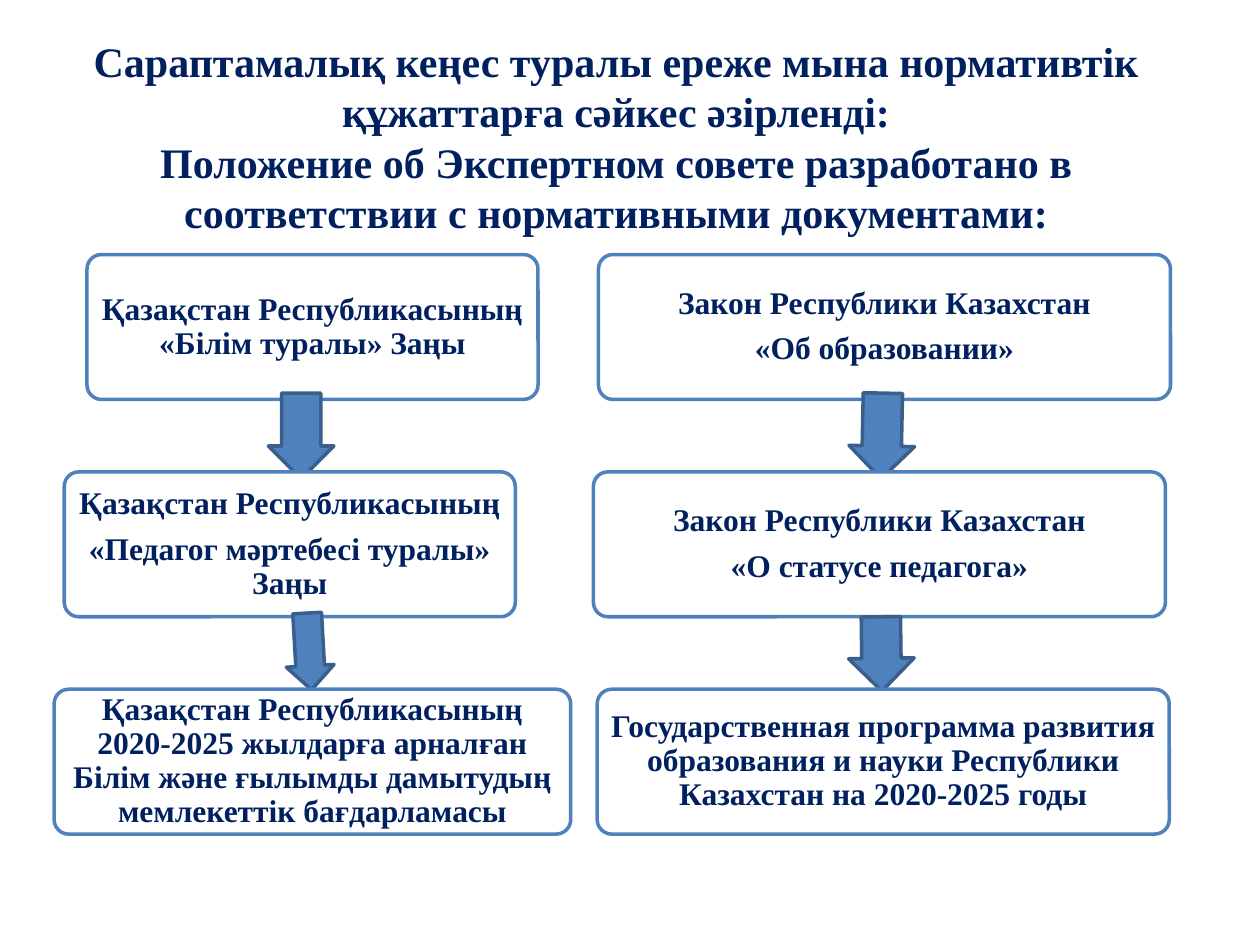
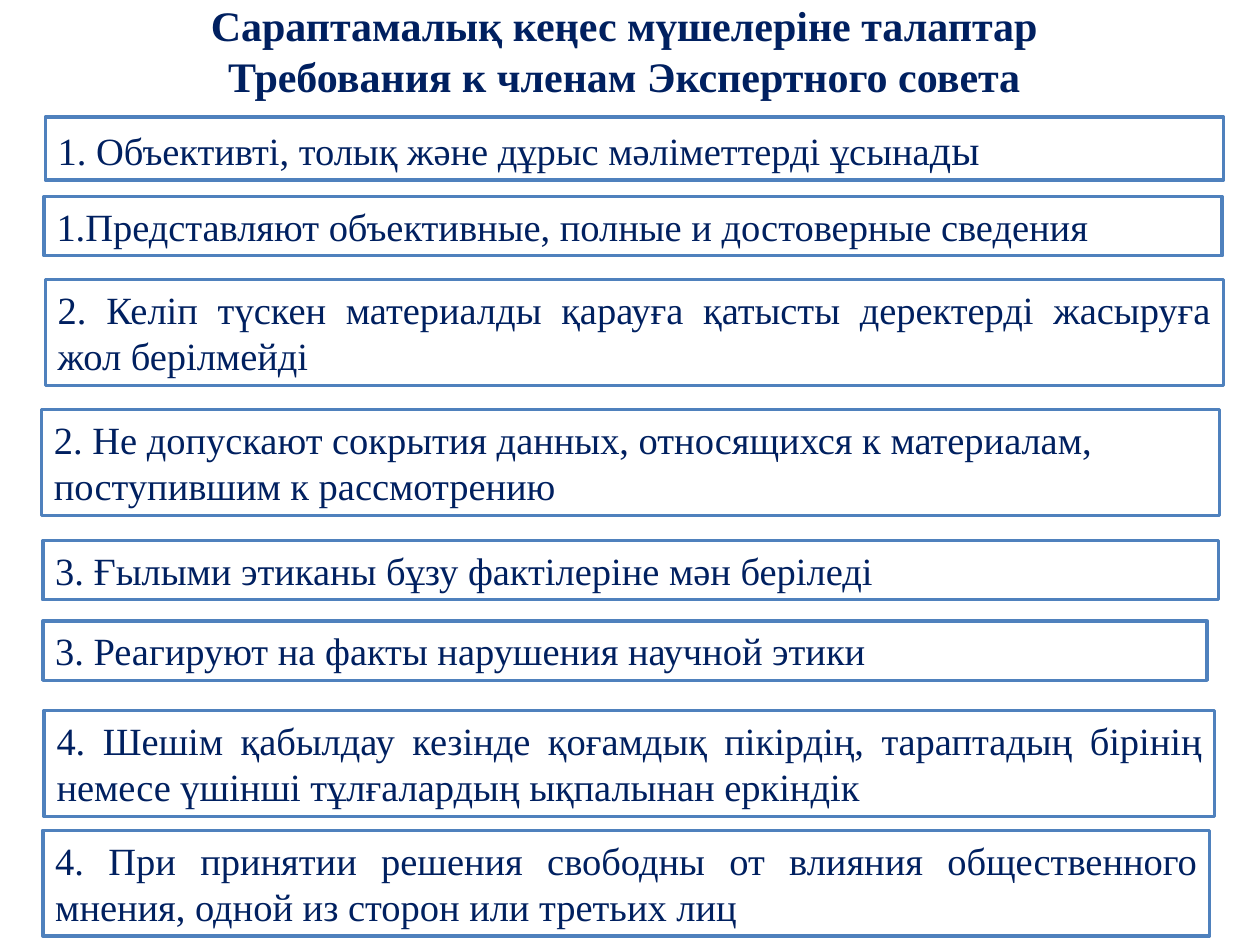
from dataclasses import dataclass

from pptx import Presentation
from pptx.dml.color import RGBColor
from pptx.enum.shapes import MSO_SHAPE
from pptx.enum.text import MSO_ANCHOR, PP_ALIGN
from pptx.util import Inches, Pt

ROUNDED, RECTANGLE, ARROW = MSO_SHAPE.ROUNDED_RECTANGLE, MSO_SHAPE.RECTANGLE, MSO_SHAPE.RIGHT_ARROW
TOP, MIDDLE = MSO_ANCHOR.TOP, MSO_ANCHOR.MIDDLE
LEFT, CENTER, JUSTIFY = PP_ALIGN.LEFT, PP_ALIGN.CENTER, PP_ALIGN.JUSTIFY

COLORS = {"text": "002060", "box": "FFFFFF", "edge": "4F81BD",
          "arrow": "4F81BD", "arrow_edge": "3A5F8C"}
FONT = "Times New Roman"
SLIDE_WIDTH, SLIDE_HEIGHT = Inches(10), Inches(7.5)
COLUMN, ROW = SLIDE_WIDTH / 100, SLIDE_HEIGHT / 75
STEP_TOP, STEP_PITCH, STEP_HEIGHT = 20.2, 17.25, 11.5
TALL, SHORT = 8.4, 4.7


@dataclass(frozen=True)
class Area:
    left: float
    top: float
    width: float
    height: float

    def emu(self) -> tuple[int, ...]:
        return (round(self.left * COLUMN), round(self.top * ROW),
                round(self.width * COLUMN), round(self.height * ROW))


@dataclass(frozen=True)
class Step:
    left: float
    width: float
    lines: tuple[str, ...]


@dataclass(frozen=True)
class Arrow:
    area: Area
    rotation: float


@dataclass(frozen=True)
class Lane:
    steps: tuple[Step, ...]
    arrows: tuple[Arrow, ...]


@dataclass(frozen=True)
class Requirement:
    area: Area
    text: str
    align: PP_ALIGN = LEFT
    large_ending: str = ""


LANES = (
    Lane(
        (Step(6.9, 35.8, ("Қазақстан Республикасының «Білім туралы» Заңы",)),
         Step(5.1, 35.8, ("Қазақстан Республикасының", "«Педагог мәртебесі туралы» Заңы")),
         Step(4.3, 41, ("Қазақстан Республикасының 2020-2025 жылдарға арналған "
                        "Білім және ғылымды дамытудың мемлекеттік бағдарламасы",))),
        (Arrow(Area(20.5, 32, 6.8, 5.2), 90), Arrow(Area(21.5, 49.8, 6.1, 3.8), 86.7)),
    ),
    Lane(
        (Step(47.5, 45.4, ("Закон Республики Казахстан", "«Об образовании»")),
         Step(47.1, 45.4, ("Закон Республики Казахстан", "«О статусе педагога»")),
         Step(47.4, 45.4, ("Государственная программа развития образования и науки "
                           "Республики Казахстан на 2020-2025 годы",))),
        (Arrow(Area(66.6, 32, 6.8, 5.2), 91.2), Arrow(Area(67, 49.3, 5.9, 5.2), 89.2)),
    ),
)

REQUIREMENTS = (
    Requirement(Area(3.6, 9.3, 93.5, 5),
                "1. Объективті, толық және дұрыс мәліметтерді ұсына", large_ending="ды"),
    Requirement(Area(3.5, 15.6, 93.5, SHORT),
                "1.Представляют объективные, полные и достоверные сведения"),
    Requirement(Area(3.6, 22.2, 93.5, TALL),
                "2. Келіп түскен материалды қарауға қатысты деректерді жасыруға жол берілмейді",
                JUSTIFY),
    Requirement(Area(3.3, 32.5, 93.5, TALL),
                "2. Не допускают сокрытия данных, относящихся к материалам, "
                "поступившим к рассмотрению"),
    Requirement(Area(3.4, 42.9, 93.3, SHORT),
                "3. Ғылыми этиканы бұзу фактілеріне мән беріледі", JUSTIFY),
    Requirement(Area(3.4, 49.3, 92.4, SHORT),
                "3. Реагируют на факты нарушения научной этики"),
    Requirement(Area(3.5, 56.4, 92.9, TALL),
                "4. Шешім қабылдау кезінде қоғамдық пікірдің, тараптадың бірінің "
                "немесе үшінші тұлғалардың ықпалынан еркіндік", JUSTIFY),
    Requirement(Area(3.4, 65.9, 92.6, TALL),
                "4. При принятии решения свободны от влияния общественного мнения, "
                "одной из сторон или третьих лиц", JUSTIFY),
)


def add_span(para, text: str, *, size: float, bold: bool = False) -> None:
    span = para.add_run()
    span.text = text
    span.font.name = FONT
    span.font.size = Pt(size)
    span.font.bold = bold
    span.font.color.rgb = RGBColor.from_string(COLORS["text"])


def write(box, lines: tuple[str, ...], *, size: float, bold: bool = False,
          align: PP_ALIGN = CENTER, anchor: MSO_ANCHOR = MIDDLE,
          spacing: float = 1.0, after: float = 0, inset: float | None = None) -> None:
    frame = box.text_frame
    frame.word_wrap = True
    frame.vertical_anchor = anchor
    if inset is not None:
        frame.margin_left = frame.margin_right = Inches(inset)
        frame.margin_top = frame.margin_bottom = Inches(inset)
    for index, line in enumerate(lines):
        para = frame.add_paragraph() if index else frame.paragraphs[0]
        para.alignment = align
        para.line_spacing = spacing
        para.space_after = Pt(after)
        add_span(para, line, size=size, bold=bold)


def add_title(page, area: Area, lines: tuple[str, ...]) -> None:
    write(page.shapes.add_textbox(*area.emu()), lines, size=24, bold=True)


def add_box(page, kind: MSO_SHAPE, area: Area, fill: str = "box", edge: str = "edge"):
    box = page.shapes.add_shape(kind, *area.emu())
    box.shadow.inherit = False
    box.fill.solid()
    box.fill.fore_color.rgb = RGBColor.from_string(COLORS[fill])
    box.line.color.rgb = RGBColor.from_string(COLORS[edge])
    box.line.width = Pt(2)
    return box


def add_arrow(page, arrow: Arrow) -> None:
    shape = add_box(page, ARROW, arrow.area, "arrow", "arrow_edge")
    shape.adjustments[0], shape.adjustments[1] = 0.6, 0.5
    shape.rotation = arrow.rotation


def add_lane(page, lane: Lane) -> None:
    for index, step in enumerate(lane.steps):
        area = Area(step.left, STEP_TOP + index * STEP_PITCH, step.width, STEP_HEIGHT)
        box = add_box(page, ROUNDED, area)
        box.adjustments[0] = 0.1
        write(box, step.lines, size=18, bold=True, spacing=0.9, after=6.3, inset=0.07)
        if index < len(lane.arrows):
            add_arrow(page, lane.arrows[index])


def add_requirement(page, item: Requirement) -> None:
    box = add_box(page, RECTANGLE, item.area)
    write(box, (item.text,), size=22, align=item.align, anchor=TOP)
    if item.large_ending:
        add_span(box.text_frame.paragraphs[0], item.large_ending, size=24)


def main() -> None:
    deck = Presentation()
    deck.slide_width, deck.slide_height = SLIDE_WIDTH, SLIDE_HEIGHT
    blank = deck.slide_layouts[6]

    documents = deck.slides.add_slide(blank)
    add_title(documents, Area(2.8, 3, 92.2, 15.6), (
        "Сараптамалық кеңес туралы ереже мына нормативтік құжаттарға сәйкес әзірленді:",
        "Положение об Экспертном совете разработано в соответствии с нормативными документами:"))
    for lane in LANES:
        add_lane(documents, lane)

    members = deck.slides.add_slide(blank)
    add_title(members, Area(10.2, 0, 78.7, 8), (
        "Сараптамалық кеңес мүшелеріне талаптар",
        "Требования к членам Экспертного совета"))
    for item in REQUIREMENTS:
        add_requirement(members, item)

    deck.save("out.pptx")


if __name__ == "__main__":
    main()
